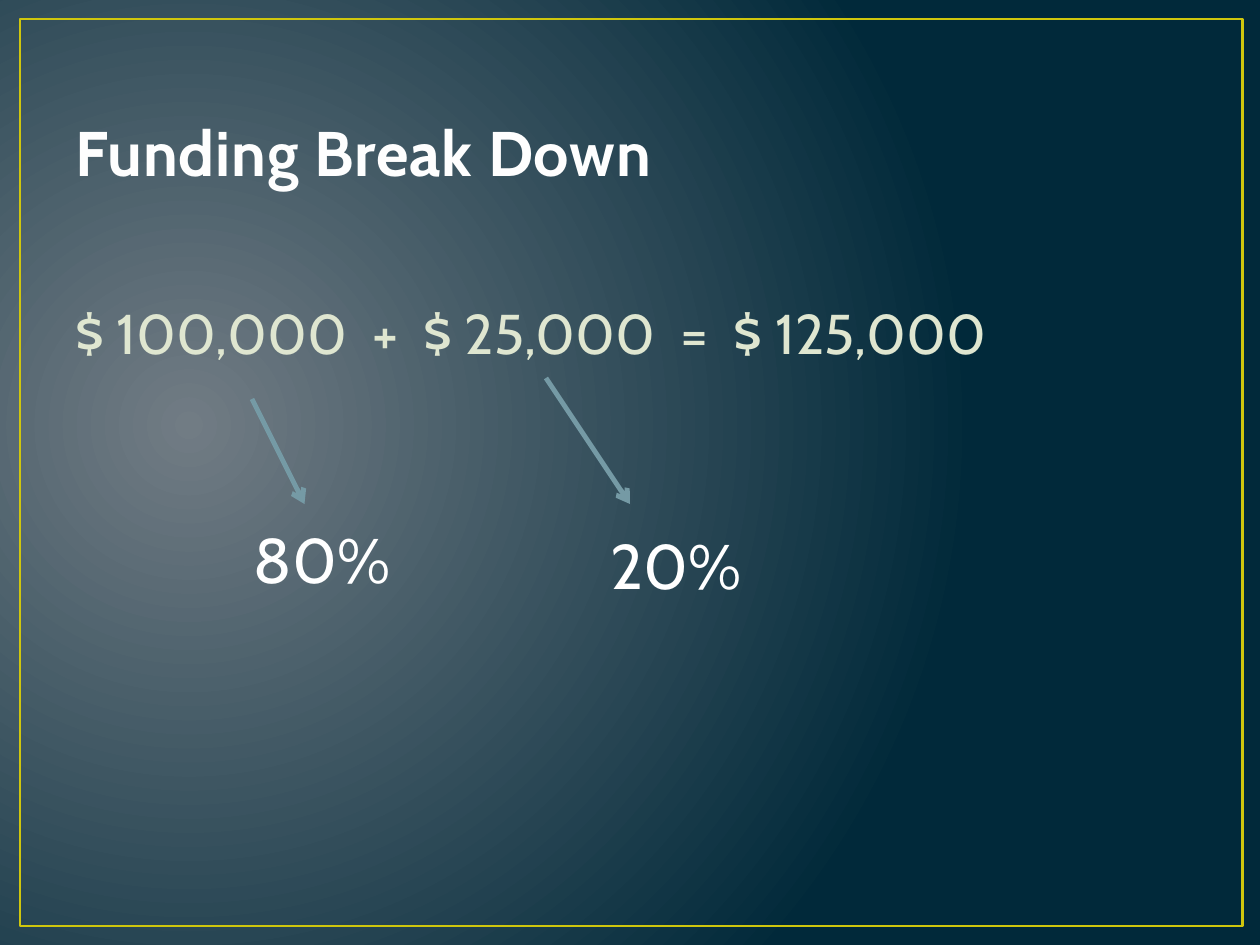
"""Build the funding break-down slide."""
from lxml.etree import SubElement
from pptx import Presentation
from pptx.dml.color import RGBColor
from pptx.enum.shapes import MSO_CONNECTOR as Connector, MSO_SHAPE as Shape
from pptx.enum.text import MSO_ANCHOR as Anchor, MSO_AUTO_SIZE as AutoSize, PP_ALIGN as Align
from pptx.oxml.ns import qn
from pptx.util import Pt

COLORS = {
    "glow": "717C84",
    "night": "01293A",
    "frame": "CFC60D",
    "title": "FEFEFE",
    "outline": "384F55",
    "sum": "DFE6D0",
    "share": "FFFFFF",
    "arrow": "759AA5",
}


def color(name):
    return RGBColor.from_string(COLORS[name])


def set_all(target, values):
    for name, value in values.items():
        setattr(target, name, value)


class SlideBuilder:
    """Hold the style and the current slide."""

    font = "Cabin"

    def __init__(self, deck):
        self.slide = deck.slides.add_slide(deck.slide_layouts[1])

    def background(self, inner, outer, focus):
        fill = self.slide.background.fill
        fill.gradient()
        for stop, name in zip(fill.gradient_stops, (inner, outer)):
            stop.color.rgb = color(name)
        gradient = next(self.slide.element.iter(qn("a:gradFill")))
        gradient.remove(gradient.find(qn("a:lin")))
        circle = SubElement(gradient, qn("a:path"), path="circle")
        edges = {side: str(percent * 1000) for side, percent in focus.items()}
        SubElement(circle, qn("a:fillToRect"), edges)

    def frame(self, left, top, width, height):
        box = self.slide.shapes.add_shape(
            Shape.RECTANGLE, Pt(left), Pt(top), Pt(width), Pt(height))
        box.shadow.inherit = False
        box.fill.background()
        box.line.color.rgb = color("frame")
        box.line.width = Pt(1.5)

    def add_text(self, box, text, size, color_name, bold=False, **frame_format):
        set_all(box.text_frame, {"word_wrap": True, **frame_format})
        para = box.text_frame.paragraphs[0]
        set_all(para, {"alignment": Align.LEFT, "space_before": Pt(0)})
        span = para.add_run()
        span.text = text
        set_all(span.font, {"name": self.font, "size": Pt(size), "bold": bold})
        span.font.color.rgb = color(color_name)
        return para, span

    def place(self, box, left, top, width, height):
        set_all(box, {"left": Pt(left), "top": Pt(top),
                      "width": Pt(width), "height": Pt(height)})

    def title(self, text, *area):
        box = self.slide.shapes.title
        self.place(box, *area)
        _, span = self.add_text(box, text, 36, "title", bold=True,
                                auto_size=AutoSize.NONE, vertical_anchor=Anchor.BOTTOM)
        properties = span._r.get_or_add_rPr()
        properties.set("spc", "50")
        outline = SubElement(properties, qn("a:ln"), w=str(Pt(1.05)))
        solid = SubElement(outline, qn("a:solidFill"))
        SubElement(solid, qn("a:srgbClr"), val=COLORS["outline"])
        properties.insert(0, outline)

    def body(self, text, *area):
        box = self.slide.placeholders[1]
        self.place(box, *area)
        para, _ = self.add_text(box, text, 32, "sum", auto_size=AutoSize.NONE,
                                vertical_anchor=Anchor.TOP, margin_top=Pt(44.8))
        properties = para._p.get_or_add_pPr()
        for name in ("marL", "indent"):
            properties.set(name, "0")
        SubElement(properties, qn("a:buNone"))

    def arrow(self, *ends):
        arrow = self.slide.shapes.add_connector(Connector.STRAIGHT, *map(Pt, ends))
        arrow.line.color.rgb = color("arrow")
        arrow.line.width = Pt(2.75)
        properties = arrow._element.spPr
        SubElement(properties.find(qn("a:ln")), qn("a:tailEnd"), type="arrow")
        SubElement(properties, qn("a:effectLst"))

    def share(self, text, left, top):
        box = self.slide.shapes.add_textbox(Pt(left), Pt(top), Pt(180), Pt(51))
        self.add_text(box, text, 36, "share", auto_size=AutoSize.SHAPE_TO_FIT_TEXT)


def main():
    deck = Presentation()
    set_all(deck, {"slide_width": Pt(720), "slide_height": Pt(540)})
    page = SlideBuilder(deck)
    page.background("glow", "night", {"l": 15, "t": 50, "r": 85, "b": 60})
    page.frame(11.5, 10.8, 698.4, 518.4)
    page.title("Funding Break Down", 36, 21.6, 648, 90)
    page.body("$ 100,000  +  $ 25,000  =  $ 125,000", 36, 126, 648, 356.4)
    page.arrow(144, 228, 174, 288)
    page.arrow(312, 216, 360, 288)
    page.share("80%", 138, 294)
    page.share("20%", 342, 297.5)
    deck.save("out.pptx")


if __name__ == "__main__":
    main()
